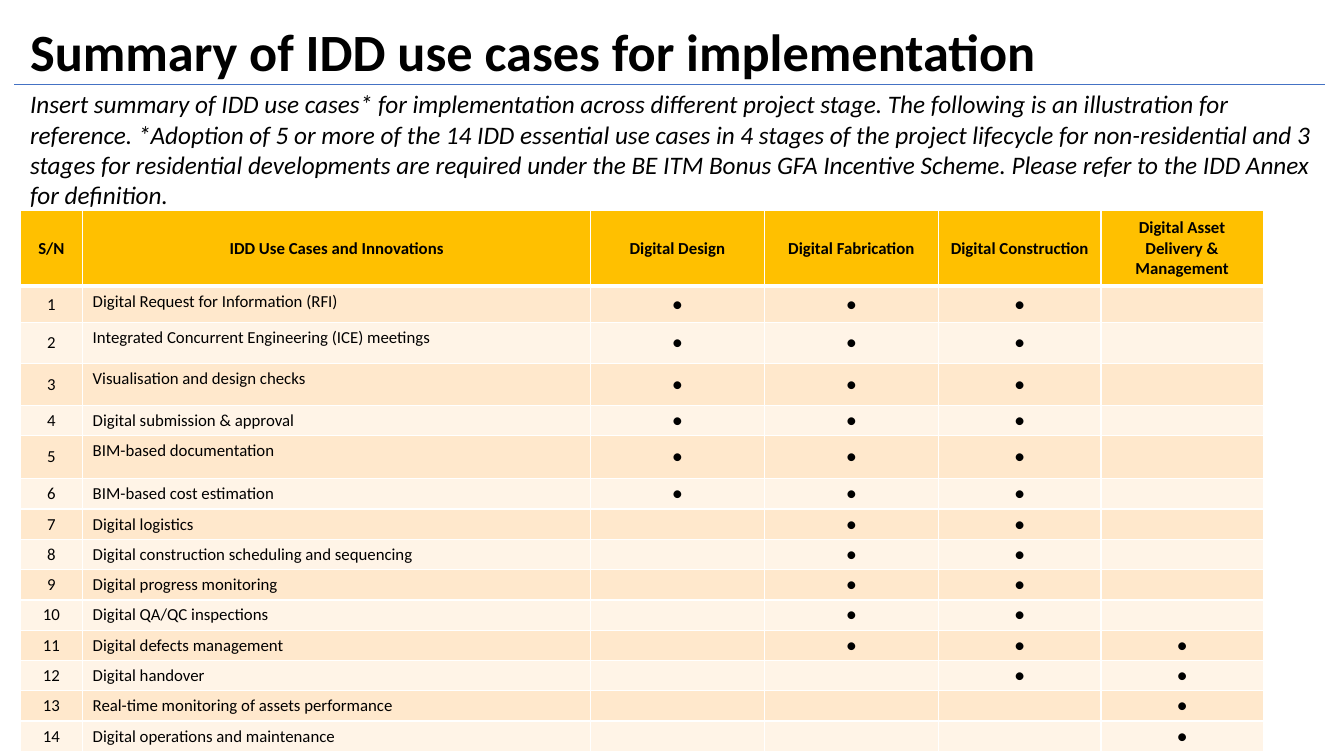
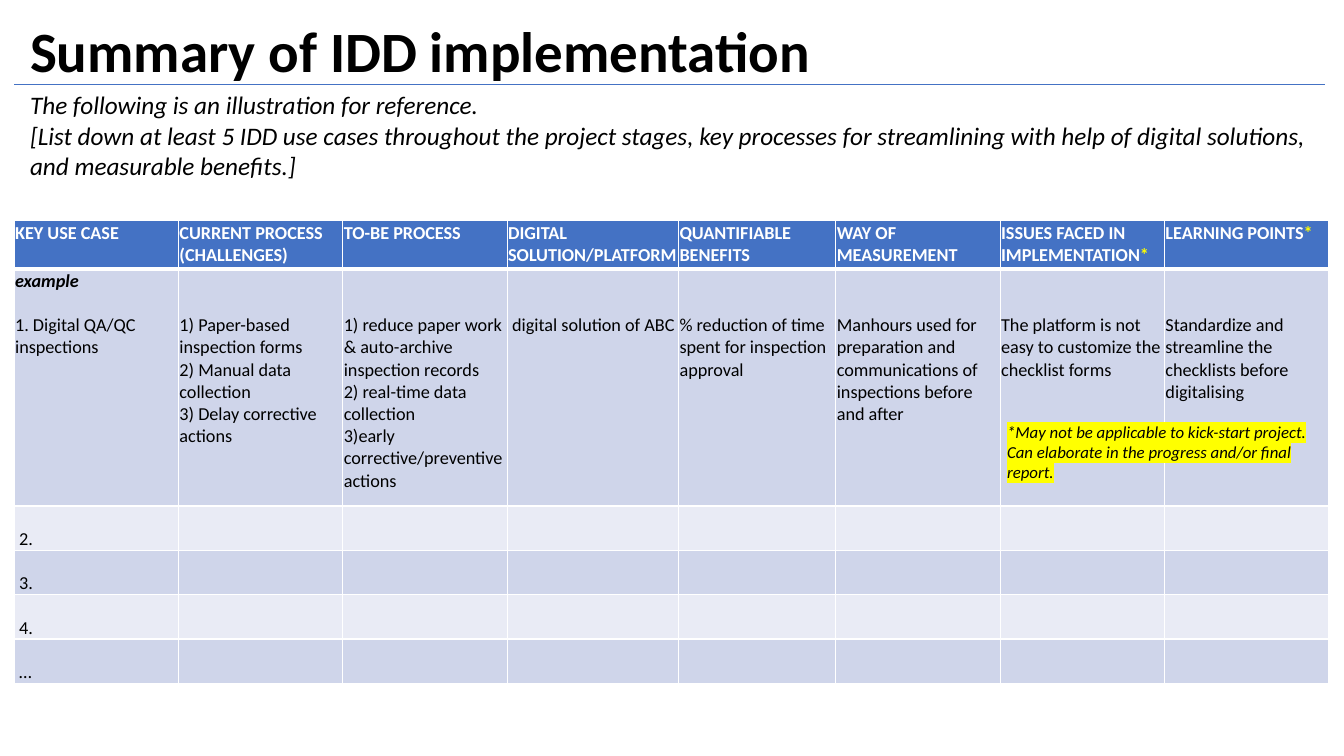
from lxml import etree
from pptx import Presentation
from pptx.dml.color import RGBColor
from pptx.enum.shapes import MSO_CONNECTOR
from pptx.enum.text import MSO_ANCHOR, PP_ALIGN
from pptx.oxml.ns import qn
from pptx.util import Inches, Pt

BLACK = RGBColor(0x00, 0x00, 0x00)
WHITE = RGBColor(0xFF, 0xFF, 0xFF)
BLUE = RGBColor(0x44, 0x72, 0xC4)
BLUE_BANDS = RGBColor(0xCF, 0xD5, 0xEA), RGBColor(0xE9, 0xEB, 0xF5)
GOLD = RGBColor(0xFF, 0xC0, 0x00)
GOLD_BANDS = RGBColor(0xFF, 0xE8, 0xCC), RGBColor(0xFF, 0xF4, 0xE7)
YELLOW = RGBColor(0xFF, 0xFF, 0x00)
FONT = "Calibri"
STRAIGHT = MSO_CONNECTOR.STRAIGHT
TOP, MIDDLE, BOTTOM = MSO_ANCHOR.TOP, MSO_ANCHOR.MIDDLE, MSO_ANCHOR.BOTTOM
LEFT, CENTER = PP_ALIGN.LEFT, PP_ALIGN.CENTER

STAGES = ["S/N", "IDD Use Cases and Innovations", "Digital Design",
          "Digital Fabrication", "Digital Construction",
          "Digital Asset Delivery & Management"]
# First and last use case marked in each stage column
SPANS = [(1, 6), (1, 11), (1, 12), (11, 14)]
CASES = [
    "Digital Request for Information (RFI)",
    "Integrated Concurrent Engineering (ICE) meetings",
    "Visualisation and design checks",
    "Digital submission & approval",
    "BIM-based documentation",
    "BIM-based cost estimation",
    "Digital logistics",
    "Digital construction scheduling and sequencing",
    "Digital progress monitoring",
    "Digital QA/QC inspections",
    "Digital defects management",
    "Digital handover",
    "Real-time monitoring of assets performance",
    "Digital operations and maintenance",
]
# Heading and worked example of each column
PLAN = [
    ("KEY USE CASE", "example\n1. Digital QA/QC inspections"),
    ("CURRENT PROCESS (CHALLENGES)",
     "1) Paper-based inspection forms\n2) Manual data collection\n"
     "3) Delay corrective actions"),
    ("TO-BE PROCESS",
     "1) reduce paper work & auto-archive inspection records\n"
     "2) real-time data collection\n3)early corrective/preventive actions"),
    ("DIGITAL SOLUTION/PLATFORM", "digital solution of ABC"),
    ("QUANTIFIABLE BENEFITS",
     "% reduction of time spent for inspection approval"),
    ("WAY OF MEASUREMENT",
     "Manhours used for preparation and communications of inspections "
     "before and after"),
    ("ISSUES FACED IN IMPLEMENTATION*",
     "The platform is not easy to customize the checklist forms"),
    ("LEARNING POINTS*",
     "Standardize and streamline the checklists before digitalising"),
]


def style(para, size, color=BLACK, bold=False, italic=False):
    for run in para.runs:
        font = run.font
        font.name, font.size = FONT, Pt(size)
        font.bold, font.italic = bold, italic
        font.color.rgb = color
    if not para.runs:
        etree.SubElement(para._p, qn("a:endParaRPr"), sz=str(size * 100))


def add_text(slide, box, text, size, bold=False, italic=False):
    frame = slide.shapes.add_textbox(*map(Inches, box)).text_frame
    frame.word_wrap = True
    frame.text = text
    for para in frame.paragraphs:
        style(para, size, bold=bold, italic=italic)
    return frame


def add_head(slide, title, size, width):
    """Title with the rule under it."""
    frame = add_text(slide, (0.2, 0.22, width, 0.68), title, size, bold=True)
    frame.vertical_anchor = MIDDLE
    frame.paragraphs[0].line_spacing = 0.8
    rule = slide.shapes.add_connector(
        STRAIGHT, Inches(0.14), Inches(0.84), Inches(13.14), Inches(0.84))
    rule.line.color.rgb = BLUE
    rule.line.width = Pt(0.5)
    etree.SubElement(rule._element.spPr, qn("a:effectLst"))


def add_edges(cell, row):
    """White cell borders, thick under the header."""
    props = cell._tc.get_or_add_tcPr()
    thick = {"T": row == 1, "B": row == 0}
    for side in "LRTB":
        width = Pt(3 if thick.get(side) else 1)
        line = etree.SubElement(props, qn("a:ln" + side), w=str(int(width)))
        solid = etree.SubElement(line, qn("a:solidFill"))
        etree.SubElement(solid, qn("a:srgbClr"), val=str(WHITE))


def add_grid(slide, left, top, cols, rows, head, bands):
    """Empty table with its fills and borders."""
    grid = slide.shapes.add_table(
        len(rows), len(cols), Inches(left), Inches(top),
        Inches(sum(cols)), Inches(sum(rows))).table
    for col, width in zip(grid.columns, cols):
        col.width = Inches(width)
    for r, height in enumerate(rows):
        grid.rows[r].height = Inches(height)
        for cell in grid.rows[r].cells:
            add_edges(cell, r)
            cell.fill.solid()
            cell.fill.fore_color.rgb = bands[(r - 1) % 2] if r else head
    return grid


def put(cell, text, size, anchor=TOP, align=LEFT, color=BLACK, bold=False):
    cell.text = text
    cell.vertical_anchor = anchor
    for para in cell.text_frame.paragraphs:
        para.alignment = align
        style(para, size, color, bold)


def add_cases(slide, left, top):
    """Use cases against project stages."""
    rows = [0.75, 0.36, 0.41, 0.41, 0.3, 0.43] + [0.3] * 9
    cols = [0.62, 5.04, 1.72, 1.73, 1.61, 1.61]
    grid = add_grid(slide, left, top, cols, rows, GOLD, GOLD_BANDS)
    for c, text in enumerate(STAGES):
        put(grid.cell(0, c), text, 12, MIDDLE, CENTER, bold=True)
    for r, case in enumerate(CASES, 1):
        put(grid.cell(r, 0), str(r), 12, MIDDLE, CENTER)
        put(grid.cell(r, 1), case, 12)
        for c, (first, last) in enumerate(SPANS, 2):
            mark = "●" if first <= r <= last else ""
            put(grid.cell(r, c), mark, 12, MIDDLE, CENTER)


def add_plan(slide, left, top):
    """Processes and benefits of each use case."""
    cols = [1.63, 1.63, 1.63, 1.7, 1.56, 1.63, 1.63, 1.63]
    rows = [0.48, 2.35] + [0.44] * 4
    grid = add_grid(slide, left, top, cols, rows, BLUE, BLUE_BANDS)
    for cell in grid.iter_cells():
        cell.margin_left = cell.margin_right = cell.margin_top = Inches(0.01)
        cell.margin_bottom = 0
        put(cell, "", 13)
    for c, (name, sample) in enumerate(PLAN):
        # Heading, with a yellow star where there is one
        cell = grid.cell(0, c)
        put(cell, name.rstrip("*"), 13, color=WHITE, bold=True)
        if name.endswith("*"):
            para = cell.text_frame.paragraphs[0]
            para.add_run().text = "*"
            style(para, 13, WHITE, True)
            para.runs[-1].font.color.rgb = YELLOW
        # Samples start two lines down
        cell = grid.cell(1, c)
        put(cell, sample, 13)
        cell.margin_top = Inches(0.45 if c else 0.01)
    label, item = grid.cell(1, 0).text_frame.paragraphs
    style(label, 13, bold=True, italic=True)
    item.space_before = Pt(15.8)
    grid.cell(1, 3).margin_left = Inches(0.05)
    for r, text in enumerate(["2.", "3.", "4.", "…"], 2):
        cell = grid.cell(r, 0)
        put(cell, text, 13, BOTTOM)
        cell.margin_left = Inches(0.05)


def add_note(slide, box, text):
    """Highlighted remark."""
    frame = add_text(slide, box, text, 12, italic=True)
    for run in frame.paragraphs[0].runs:
        mark = etree.Element(qn("a:highlight"))
        etree.SubElement(mark, qn("a:srgbClr"), val=str(YELLOW))
        run._r.rPr.find(qn("a:solidFill")).addnext(mark)


def main():
    deck = Presentation()
    deck.slide_width, deck.slide_height = Inches(13.33), Inches(7.5)
    blank = deck.slide_layouts[6]

    # Use cases
    slide = deck.slides.add_slide(blank)
    add_head(slide, "Summary of IDD use cases for implementation", 37.4, 10.2)
    add_cases(slide, 0.2, 2.09)
    add_text(
        slide, (0.2, 0.83, 13.13, 1.62),
        "Insert summary of IDD use cases* for implementation across different "
        "project stage. The following is an illustration for reference. "
        "*Adoption of 5 or more of the 14 IDD essential use cases in 4 stages "
        "of the project lifecycle for non-residential and 3 stages for "
        "residential developments are required under the BE ITM Bonus GFA "
        "Incentive Scheme. Please refer to the IDD Annex for definition.",
        18, italic=True)

    # Implementation
    slide = deck.slides.add_slide(blank)
    add_head(slide, "Summary of IDD implementation", 40.7, 13.13)
    add_text(
        slide, (0.2, 0.84, 13.07, 1.01),
        "The following is an illustration for reference.\n"
        "[List down at least 5 IDD use cases throughout the project stages, "
        "key processes for streamlining with help of digital solutions, "
        "and measurable benefits.]",
        18, italic=True)
    add_plan(slide, 0.14, 2.19)
    add_note(
        slide, (9.89, 4.13, 3.44, 0.71),
        "*May not be applicable to kick-start project. Can elaborate in the "
        "progress and/or final report.")

    deck.save("out.pptx")


if __name__ == "__main__":
    main()
